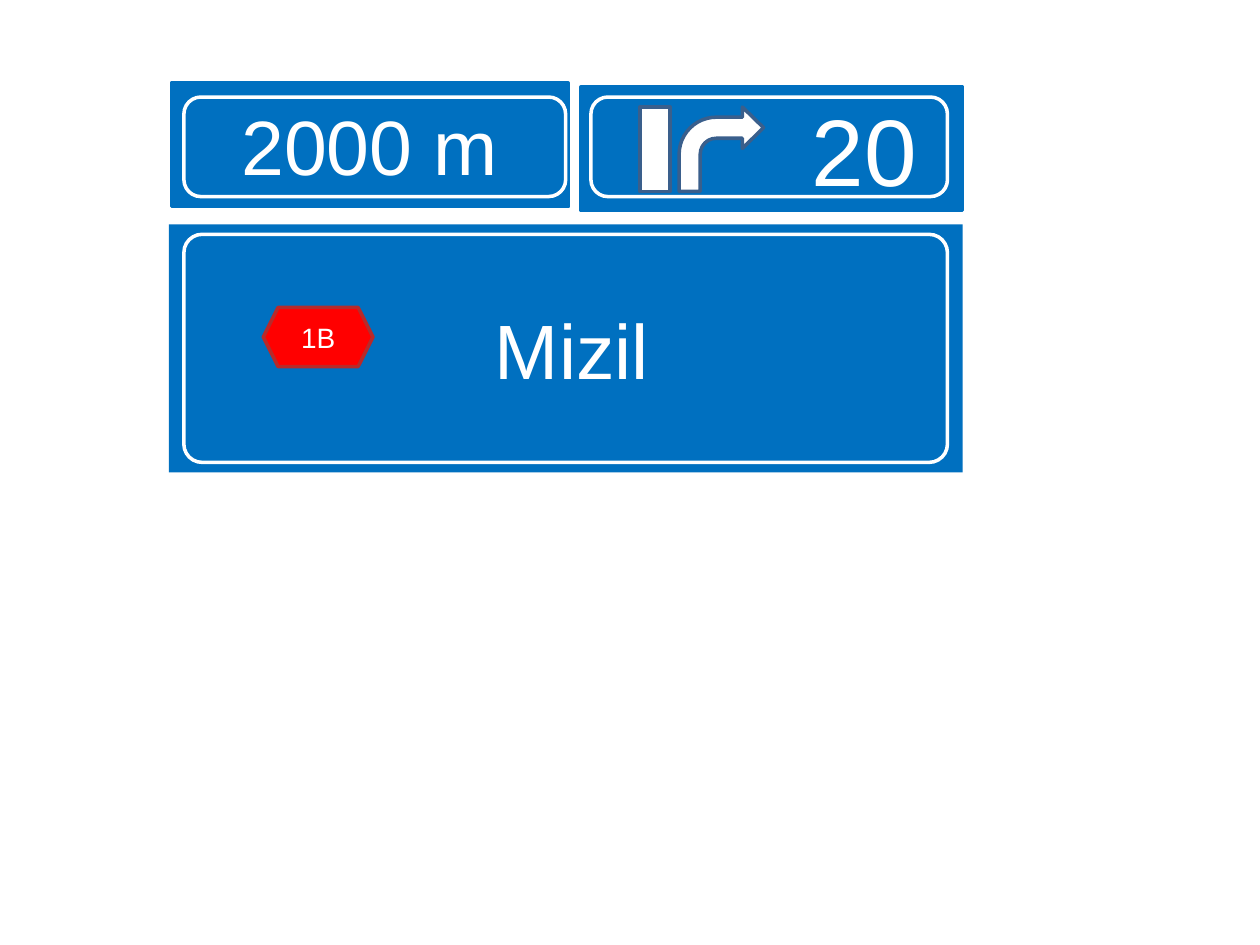
from pptx import Presentation
from pptx.dml.color import RGBColor
from pptx.enum import shapes, text
from pptx.util import Inches, Pt

BLUE, WHITE, RED = "0070C0", "FFFFFF", "FF0000"
ARROW_EDGE, BADGE_EDGE = "3A5F8C", "B82A2A"
KIND = shapes.MSO_SHAPE


def color(value):
    return RGBColor.from_string(value)


def add_figure(page, kind, place, fill, line, adjustments=()):
    figure = page.shapes.add_shape(kind, *map(Inches, place))
    figure.shadow.inherit = False
    if fill:
        figure.fill.solid()
        figure.fill.fore_color.rgb = color(fill)
    else:
        figure.fill.background()
    figure.line.color.rgb = color(line)
    figure.line.width = Pt(2)
    for index, value in enumerate(adjustments):
        figure.adjustments[index] = value
    return figure


def write_label(figure, words, size, left=0.1):
    frame = figure.text_frame
    frame.text = words
    frame.word_wrap = True
    frame.auto_size = text.MSO_AUTO_SIZE.NONE
    frame.vertical_anchor = text.MSO_ANCHOR.MIDDLE
    frame.margin_left = Inches(left)
    frame.margin_right = Inches(0.1)
    para = frame.paragraphs[0]
    para.alignment = text.PP_ALIGN.CENTER
    font = para.runs[0].font
    font.name = "Arial"
    font.size = Pt(size)
    font.color.rgb = color(WHITE)


def add_panel(page, place, words, size, left=0.1):
    panel = add_figure(page, KIND.ROUNDED_RECTANGLE, place, BLUE, BLUE, [0])
    write_label(panel, words, size, left)


def add_border(page, place, radius=0.17):
    add_figure(page, KIND.ROUNDED_RECTANGLE, place, None, WHITE, [radius])


def fill_title(page, place, words):
    title = page.shapes.title
    title.left, title.top, title.width, title.height = map(Inches, place)
    title.fill.solid()
    title.fill.fore_color.rgb = color(BLUE)
    write_label(title, words, 44, left=0.2)


def main():
    deck = Presentation()
    deck.slide_width, deck.slide_height = Inches(10), Inches(7.5)
    page = deck.slides.add_slide(deck.slide_layouts[5])

    fill_title(page, (1.34, 1.78, 6.3, 1.97), "Mizil")
    add_panel(page, (1.36, 0.66, 3.15, 0.98), "2000 m", 44)
    add_panel(page, (4.61, 0.69, 3.03, 0.98), "20", 54, left=1.57)

    add_figure(page, KIND.RECTANGLE, (5.08, 0.85, 0.24, 0.67), WHITE, ARROW_EDGE)
    add_figure(page, KIND.BENT_ARROW, (5.39, 0.85, 0.67, 0.67), WHITE, ARROW_EDGE,
               [0.25, 0.245, 0.25, 0.44])
    badge = add_figure(page, KIND.HEXAGON, (2.09, 2.44, 0.87, 0.47), RED, BADGE_EDGE)
    write_label(badge, "1B", 16)

    add_border(page, (1.46, 0.77, 3.03, 0.79))
    add_border(page, (4.69, 0.77, 2.83, 0.79))
    add_border(page, (1.46, 1.86, 6.06, 1.81), 0.08)
    deck.save("out.pptx")


if __name__ == "__main__":
    main()
